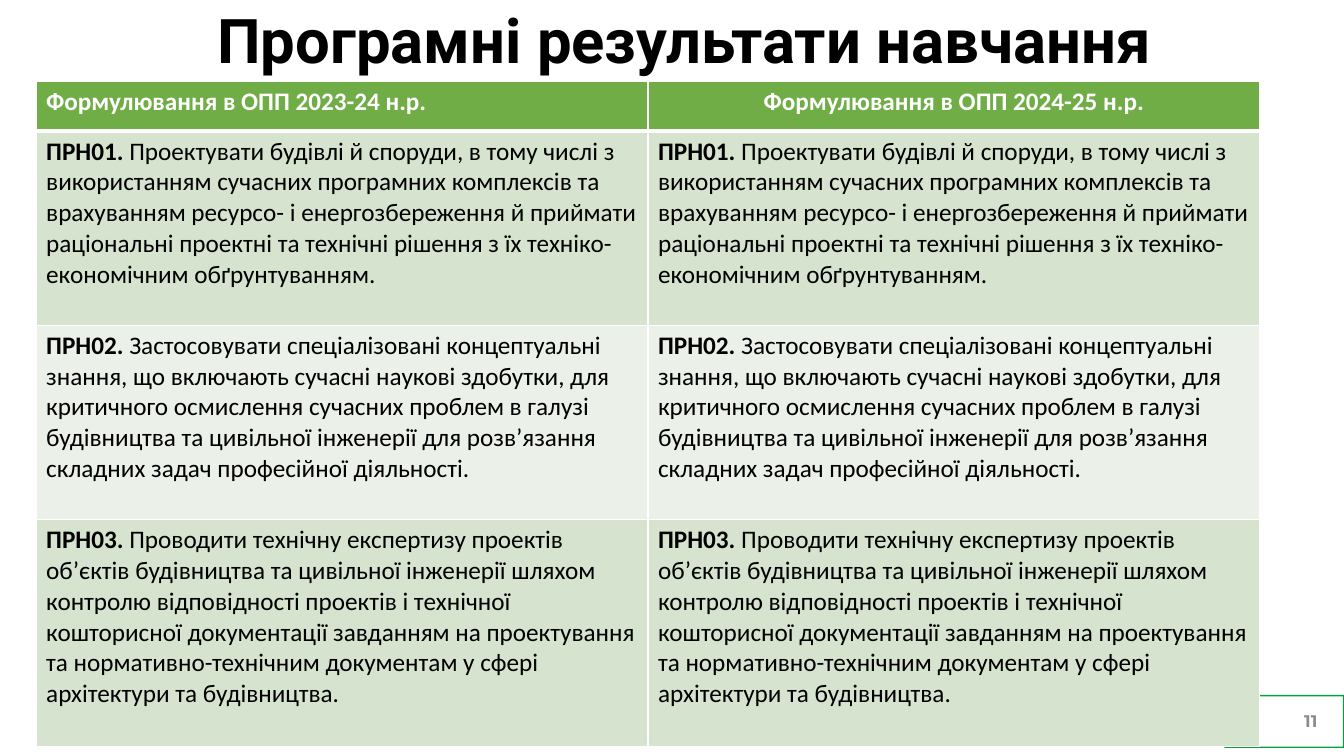
import dataclasses

import lxml.etree
import pptx
import pptx.dml.color
import pptx.enum.shapes
import pptx.enum.text
import pptx.oxml.ns
import pptx.util

Cm = pptx.util.Cm
Pt = pptx.util.Pt
Align = pptx.enum.text.PP_ALIGN


@dataclasses.dataclass(frozen=True)
class Theme:
    title_font: str = "Roboto"
    number_font: str = "Montserrat"
    table_font: str = "Calibri"
    title_size: int = 44
    number_size: int = 12
    table_size: int = 18
    black: str = "000000"
    white: str = "FFFFFF"
    gray: str = "8C8C8C"
    outline: str = "01A33C"
    header: str = "70AD47"
    bands: tuple = ("D5E3CF", "EBF1E9")
    thin: int = 1
    thick: int = 3


HEADERS = (
    ("Формулювання в ОПП 2023-24 н.р.", Align.LEFT),
    ("Формулювання в ОПП 2024-25 н.р.", Align.CENTER),
)
OUTCOMES = (
    ("ПРН01.", "Проектувати будівлі й споруди, в тому числі з використанням "
     "сучасних програмних комплексів та врахуванням ресурсо- і енергозбереження "
     "й приймати раціональні проектні та технічні рішення з їх "
     "техніко-економічним обґрунтуванням."),
    ("ПРН02.", "Застосовувати спеціалізовані концептуальні знання, що включають "
     "сучасні наукові здобутки, для критичного осмислення сучасних проблем в "
     "галузі будівництва та цивільної інженерії для розв’язання складних задач "
     "професійної діяльності."),
    ("ПРН03.", "Проводити технічну експертизу проектів об’єктів будівництва та "
     "цивільної інженерії шляхом контролю відповідності проектів і технічної "
     "кошторисної документації завданням на проектування та "
     "нормативно-технічним документам у сфері архітектури та будівництва."),
)
ROW_HEIGHTS = (1.24, 4.9, 4.9, 5.72)


class SlideBuilder:
    def __init__(self, slide, theme):
        self.slide = slide
        self.theme = theme

    def color(self, value):
        return pptx.dml.color.RGBColor.from_string(value)

    def style(self, font, name, size, color):
        font.name = name
        font.size = Pt(size)
        font.color.rgb = self.color(color)

    def page_tab(self, left, top, width, height):
        tab = self.slide.shapes.add_shape(
            pptx.enum.shapes.MSO_SHAPE.PENTAGON,
            Cm(left), Cm(top), Cm(width), Cm(height))
        tab.rotation = 180
        tab.shadow.inherit = False
        tab.fill.solid()
        tab.fill.fore_color.rgb = self.color(self.theme.white)
        tab.line.color.rgb = self.color(self.theme.outline)
        tab.line.width = Pt(self.theme.thin)

    def text(self, words, left, top, width, height, name, size, color,
             align=Align.LEFT, line_spacing=1.0):
        box = self.slide.shapes.add_textbox(
            Cm(left), Cm(top), Cm(width), Cm(height))
        frame = box.text_frame
        frame.word_wrap = True
        frame.vertical_anchor = pptx.enum.text.MSO_ANCHOR.MIDDLE
        para = frame.paragraphs[0]
        para.text = words
        para.alignment = align
        para.line_spacing = line_spacing
        self.style(para.font, name, size, color)
        para.font.bold = True

    def borders(self, cell, top, bottom):
        """Draw white borders; top and bottom are widths in points."""
        properties = cell._tc.get_or_add_tcPr()
        thin = self.theme.thin
        for side, width in (("L", thin), ("R", thin), ("T", top), ("B", bottom)):
            line = lxml.etree.SubElement(
                properties, pptx.oxml.ns.qn(f"a:ln{side}"), w=str(Pt(width)))
            fill = lxml.etree.SubElement(line, pptx.oxml.ns.qn("a:solidFill"))
            lxml.etree.SubElement(
                fill, pptx.oxml.ns.qn("a:srgbClr"), val=self.theme.white)

    def cell(self, cell, fill, color, parts, align, top, bottom):
        """Fill one cell; parts are (words, bold) pairs."""
        self.borders(cell, top, bottom)
        cell.fill.solid()
        cell.fill.fore_color.rgb = self.color(fill)
        para = cell.text_frame.paragraphs[0]
        para.alignment = align
        self.style(para.font, self.theme.table_font, self.theme.table_size, color)
        for words, bold in parts:
            span = para.add_run()
            span.text = words
            self.style(span.font, self.theme.table_font,
                       self.theme.table_size, color)
            span.font.bold = bold

    def outcomes_table(self, left, top, width):
        theme = self.theme
        table = self.slide.shapes.add_table(
            len(ROW_HEIGHTS), len(HEADERS), Cm(left), Cm(top),
            Cm(width), Cm(sum(ROW_HEIGHTS))).table
        table.first_row = False
        table.horz_banding = False
        for row, height in zip(table.rows, ROW_HEIGHTS):
            row.height = Cm(height)
        for column, (heading, align) in enumerate(HEADERS):
            table.columns[column].width = Cm(width / len(HEADERS))
            self.cell(table.cell(0, column), theme.header, theme.white,
                      [(heading, True)], align, theme.thin, theme.thick)
            for index, (code, wording) in enumerate(OUTCOMES):
                self.cell(table.cell(index + 1, column),
                          theme.bands[index % 2], theme.black,
                          [(code, True), (" " + wording, False)], Align.LEFT,
                          theme.thin if index else theme.thick, theme.thin)


def main():
    deck = pptx.Presentation()
    deck.slide_width = Cm(33.87)
    deck.slide_height = Cm(19.05)
    theme = Theme()
    page = SlideBuilder(deck.slides.add_slide(deck.slide_layouts[6]), theme)
    page.page_tab(30.23, 17.53, 3.63, 1.3)
    page.text("Програмні результати навчання", 5.23, -0.74, 28.6, 3.68,
              theme.title_font, theme.title_size, theme.black,
              line_spacing=0.9)
    page.text("11", 25.83, 17.65, 7.62, 1.02, theme.number_font,
              theme.number_size, theme.gray, Align.RIGHT)
    page.outcomes_table(0.91, 2.06, 30.84)
    deck.save("out.pptx")


if __name__ == "__main__":
    main()
